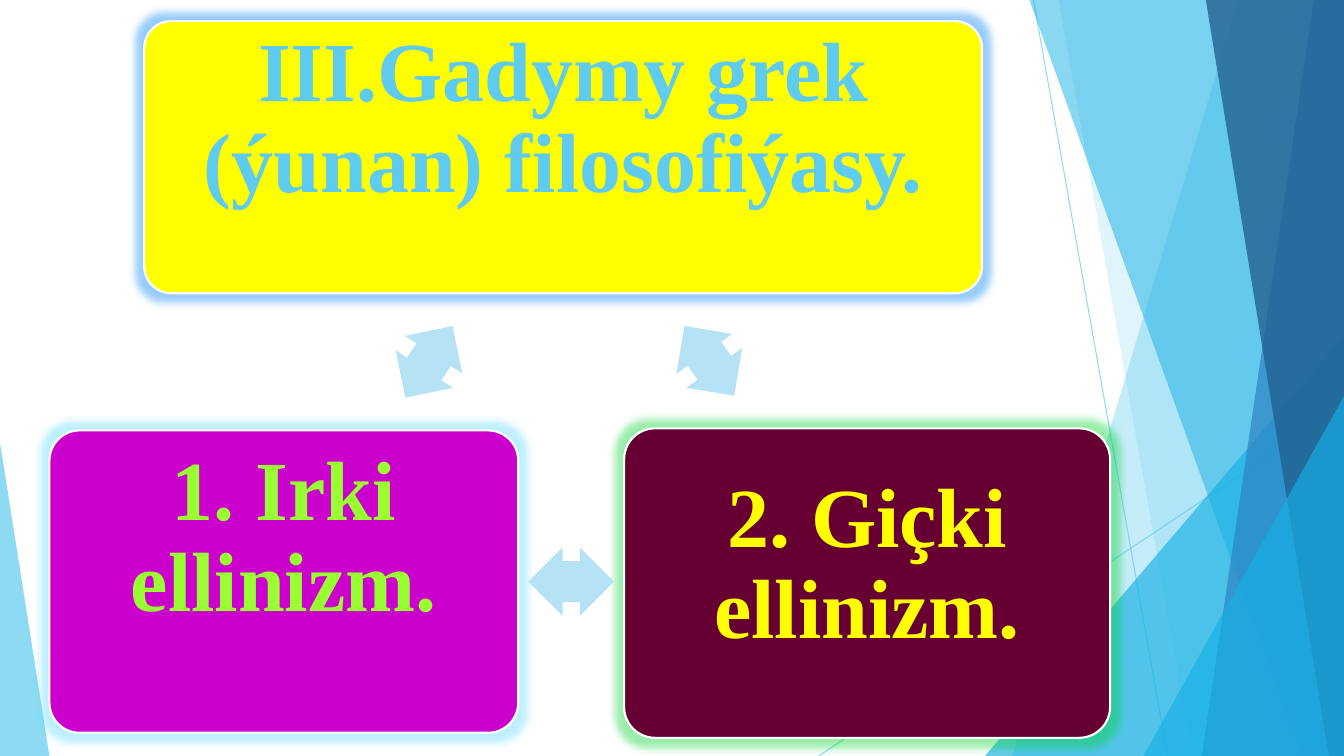
"""Build the slide on the two periods of ancient Greek philosophy."""
from lxml import etree
from pptx import Presentation
from pptx.dml.color import RGBColor
from pptx.enum.shapes import MSO_CONNECTOR, MSO_SHAPE
from pptx.enum.text import MSO_ANCHOR, MSO_AUTO_SIZE, PP_ALIGN
from pptx.oxml.ns import qn
from pptx.util import Inches, Pt

STRAIGHT = MSO_CONNECTOR.STRAIGHT
TRIANGLE, ROUNDED = MSO_SHAPE.ISOSCELES_TRIANGLE, MSO_SHAPE.ROUNDED_RECTANGLE
DOUBLE_ARROW = MSO_SHAPE.LEFT_RIGHT_ARROW
TOP, CENTER = MSO_ANCHOR.TOP, PP_ALIGN.CENTER
NO_AUTOFIT = MSO_AUTO_SIZE.NONE

SKY = RGBColor(0x5F, 0xCB, 0xEF)
CYAN = RGBColor(0x17, 0xB0, 0xE4)
BLUE = RGBColor(0x2E, 0x83, 0xC3)
NAVY = RGBColor(0x22, 0x62, 0x92)
PALE = RGBColor(0xB6, 0xE2, 0xF6)
WHITE = RGBColor(0xFF, 0xFF, 0xFF)
YELLOW = RGBColor(0xFF, 0xFF, 0x00)
MAGENTA = RGBColor(0xCC, 0x00, 0xCC)
MAROON = RGBColor(0x66, 0x00, 0x33)
LIME = RGBColor(0x99, 0xFF, 0x33)
BLUE_GLOW = RGBColor(0x02, 0x82, 0xF8)
CYAN_GLOW = RGBColor(0x5A, 0xDA, 0xFF)
GREEN_GLOW = RGBColor(0x00, 0xD5, 0x2D)
WIDTH, HEIGHT = 13.33, 7.5


def paint(shape, color, opacity=100):
    shape.shadow.inherit = False
    shape.fill.solid()
    shape.fill.fore_color.rgb = color
    shape.line.fill.background()
    if opacity < 100:
        tone = shape.element.spPr.find(qn("a:solidFill"))[0]
        etree.SubElement(tone, qn("a:alpha"), val=str(opacity * 1000))


def write(shape, text, color, top_inset):
    frame = shape.text_frame
    frame.text = text
    settings = {"word_wrap": True, "auto_size": NO_AUTOFIT, "vertical_anchor": TOP,
                "margin_left": Inches(0.25), "margin_right": Inches(0.25),
                "margin_top": Inches(top_inset), "margin_bottom": 0}
    for name, value in settings.items():
        setattr(frame, name, value)
    para = frame.paragraphs[0]
    para.alignment, para.line_spacing, para.space_before = CENTER, 0.9, Pt(0)
    for name, value in {"name": "Times New Roman", "size": Pt(60), "bold": True}.items():
        setattr(para.font, name, value)
    para.font.color.rgb = color


deck = Presentation()
deck.slide_width, deck.slide_height = Inches(WIDTH), Inches(HEIGHT)
slide = deck.slides.add_slide(deck.slide_layouts[5])
shapes = slide.shapes

for ends in [(10.25, 0, 11.58, HEIGHT), (WIDTH, 4.03, 8.12, HEIGHT)]:
    ray = shapes.add_connector(STRAIGHT, *map(Inches, ends))
    ray.line.color.rgb, ray.line.width = SKY, Pt(0.75)
    tone = ray.line.fill.fore_color and ray.element.spPr.find(qn("a:ln"))[0][0]
    etree.SubElement(tone, qn("a:alpha"), val="70000")
    etree.SubElement(ray.element.spPr, qn("a:effectLst"))

facets = [
    ("band", (12.28, 10.04), SKY, 36),
    ("band", (10.5, 11.83), SKY, 20),
    ("triangle", (9.77, 3.33, 3.56, 4.17, 1), CYAN, 66),
    ("band", (10.21, 12.91), CYAN, 50),
    ("band", (13.03, 11.92), BLUE, 70),
    ("band", (11.96, 13.18), NAVY, 80),
    ("triangle", (11.34, 3.93, 1.99, 3.57, 1), CYAN, 66),
    ("triangle", (0, 4.39, 0.49, 3.11, 0), SKY, 70),
]
for kind, geometry, color, opacity in facets:
    if kind == "band":
        top_x, bottom_x = geometry
        builder = shapes.build_freeform(Inches(top_x), 0)
        corners = [(WIDTH, 0), (WIDTH, HEIGHT), (bottom_x, HEIGHT)]
        builder.add_line_segments([(Inches(x), Inches(y)) for x, y in corners], close=True)
        facet = builder.convert_to_shape()
    else:
        *place, apex = geometry
        facet = shapes.add_shape(TRIANGLE, *map(Inches, place))
        facet.adjustments[0] = apex
    paint(facet, color, opacity)

cards = [
    ((1.43, 0.21, 8.31, 2.7), YELLOW, BLUE_GLOW, None),
    ((6.19, 4.25, 4.82, 3.07), MAROON, GREEN_GLOW, ("2. Giçki ellinizm.", YELLOW, 0.37)),
    ((0.49, 4.27, 4.65, 3), MAGENTA, CYAN_GLOW, ("1. Irki ellinizm.", LIME, 0.09)),
]
for place, color, glow_color, label in cards:
    card = shapes.add_shape(ROUNDED, *map(Inches, place))
    card.adjustments[0] = 0.1
    paint(card, color)
    card.line.color.rgb, card.line.width = WHITE, Pt(1.5)
    effects = card.element.spPr.find(qn("a:effectLst"))
    glow = etree.SubElement(effects, qn("a:glow"), rad=str(Pt(11)))
    tone = etree.SubElement(glow, qn("a:srgbClr"), val=str(glow_color))
    etree.SubElement(tone, qn("a:alpha"), val="40000")
    if label:
        write(card, *label)

for left, top, angle in [(6.61, 3.24, 54.5), (5.24, 5.43, 180), (3.83, 3.25, 303.4)]:
    arrow = shapes.add_shape(DOUBLE_ARROW, *map(Inches, (left, top, 0.85, 0.68)))
    arrow.adjustments[0], arrow.adjustments[1] = 0.6, 0.5
    arrow.rotation = angle
    paint(arrow, PALE)

title = shapes.title
title.left, title.top, title.width, title.height = map(Inches, (1.51, 0.29, 8.15, 2.54))
write(title, "III.Gadymy grek (ýunan) filosofiýasy.", SKY, 0)
title.element.getparent().append(title.element)

deck.save("out.pptx")
